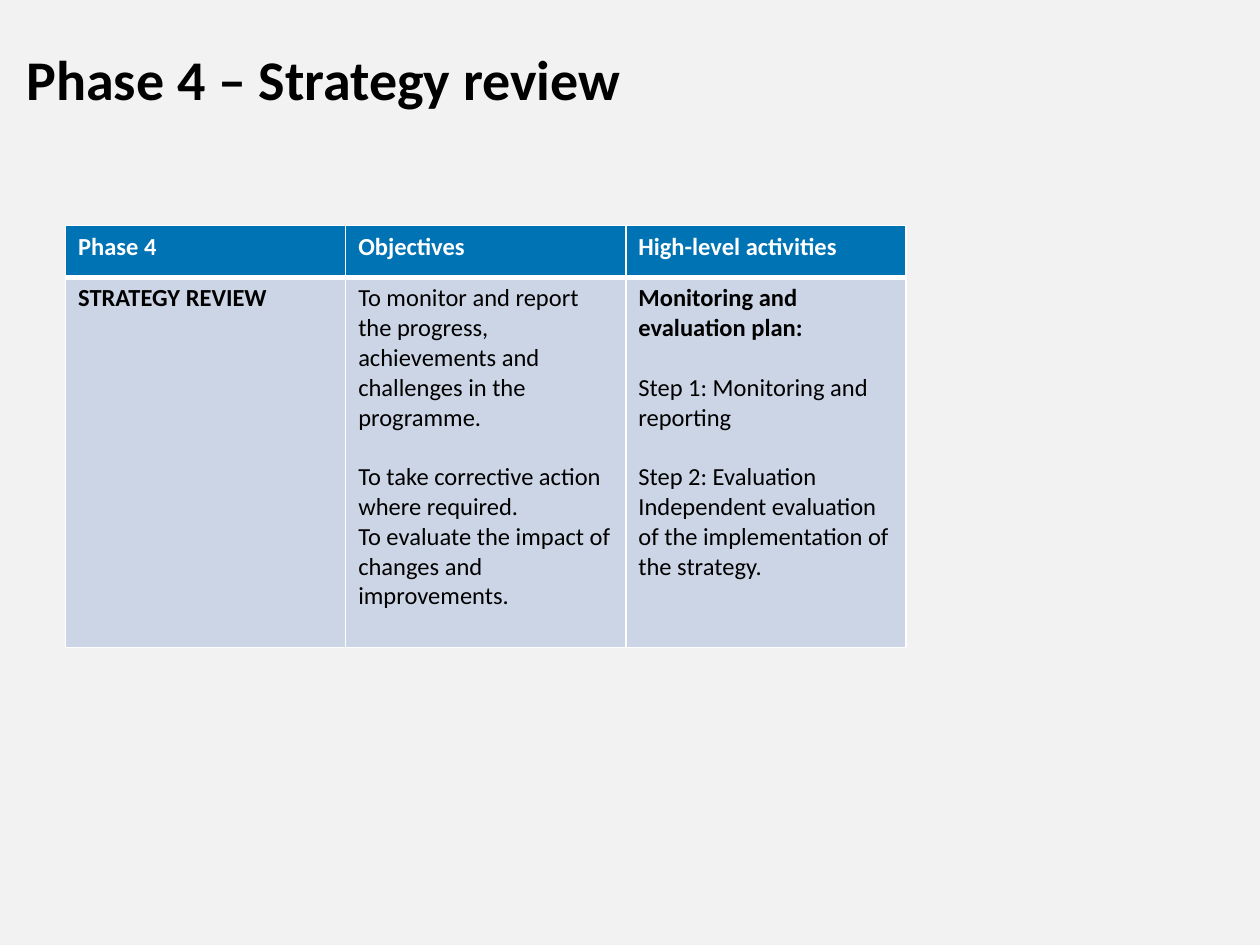
import pptx
import pptx.dml.color
import pptx.enum.text
import pptx.oxml
import pptx.oxml.ns
import pptx.util

Inches = pptx.util.Inches
Pt = pptx.util.Pt

COLORS = {"page": "F2F2F2", "head": "0073B5", "body": "CCD5E5",
          "white": "FFFFFF", "black": "000000"}
GAP = 17  # points, one line of table text

HEADS = ["Phase 4", "Objectives", "High-level activities"]
# Each paragraph: text, bold, space before
BODY = [
    [("STRATEGY REVIEW", True, 0)],
    [("To monitor and report the progress, achievements and challenges "
      "in the programme.", False, 0),
     ("To take corrective action where required.", False, GAP),
     ("To evaluate the impact of changes and improvements.", False, 0)],
    [("Monitoring and evaluation plan:", True, 0),
     ("Step 1: Monitoring and reporting", False, GAP),
     ("Step 2: Evaluation", False, GAP),
     ("Independent evaluation of the implementation of the strategy.",
      False, 0)],
]


def rgb(name):
    return pptx.dml.color.RGBColor.from_string(COLORS[name])


class Deck:
    """Holds the text style and the current slide."""

    def __init__(self, font):
        self.font = font
        self.file = pptx.Presentation()
        self.file.slide_width = Inches(10)
        self.file.slide_height = Inches(7.5)

    def page(self):
        self.slide = self.file.slides.add_slide(self.file.slide_layouts[5])
        fill = self.slide.background.fill
        fill.solid()
        fill.fore_color.rgb = rgb("page")

    def style(self, para, size, color, bold):
        para.alignment = pptx.enum.text.PP_ALIGN.LEFT
        form = {"name": self.font, "size": Pt(size), "bold": bold}
        for key, value in form.items():
            setattr(para.font, key, value)
        para.font.color.rgb = rgb(color)

    def title(self, text, left, top, width, height):
        shape = self.slide.shapes.title
        place = {"left": left, "top": top, "width": width, "height": height}
        for key, value in place.items():
            setattr(shape, key, Inches(value))
        frame = shape.text_frame
        form = {"text": text, "word_wrap": True,
                "auto_size": pptx.enum.text.MSO_AUTO_SIZE.NONE,
                "vertical_anchor": pptx.enum.text.MSO_ANCHOR.TOP}
        for key, value in form.items():
            setattr(frame, key, value)
        self.style(frame.paragraphs[0], 32, "black", True)

    def border(self, cell, widths):
        """Draw white cell edges, with widths in points by side."""
        props = cell._tc.get_or_add_tcPr()
        for side, width in widths.items():
            props.append(pptx.oxml.parse_xml(
                f'<a:ln{side} {pptx.oxml.ns.nsdecls("a")} w="{Pt(width)}">'
                f'<a:solidFill><a:srgbClr val="{COLORS["white"]}"/>'
                f'</a:solidFill></a:ln{side}>'))

    def cell(self, cell, paras, fill, color, widths):
        self.border(cell, widths)
        cell.fill.solid()
        cell.fill.fore_color.rgb = rgb(fill)
        frame = cell.text_frame
        for i, (text, bold, gap) in enumerate(paras):
            para = frame.add_paragraph() if i else frame.paragraphs[0]
            para.text = text
            if gap:
                para.space_before = Pt(gap)
            self.style(para, 14, color, bold)

    def table(self, heads, body, left, top, width, heights):
        grid = self.slide.shapes.add_table(
            2, len(heads), Inches(left), Inches(top), Inches(width),
            Inches(sum(heights))).table
        for row, height in zip(grid.rows, heights):
            row.height = Inches(height)
        for col, (head, paras) in enumerate(zip(heads, body)):
            self.cell(grid.cell(0, col), [(head, True, 0)], "head", "white",
                      {"L": 1, "R": 1, "T": 1, "B": 3})
            self.cell(grid.cell(1, col), paras, "body", "black",
                      {"L": 1, "R": 1, "T": 3, "B": 1})


def main():
    deck = Deck("Calibri")
    deck.page()
    deck.table(HEADS, BODY, 0.52, 1.79, 6.67, [0.41, 2.94])
    deck.title("Phase 4 – Strategy review", 0.11, 0.3, 7.28, 0.64)
    deck.file.save("out.pptx")


if __name__ == "__main__":
    main()
